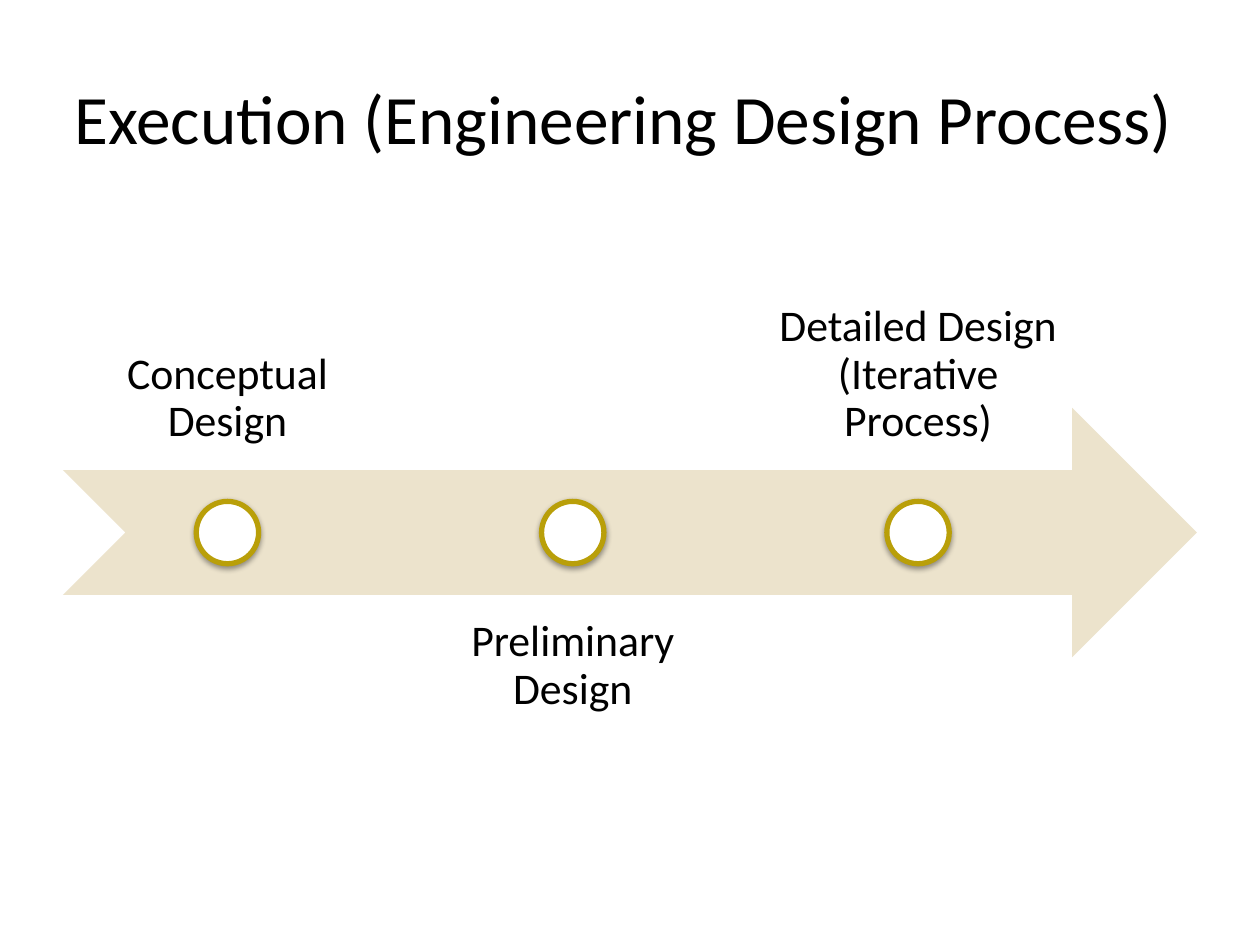
from lxml import etree
from pptx import Presentation
from pptx.dml.color import RGBColor
from pptx.enum import shapes, text
from pptx.oxml import ns
from pptx.util import Cm, Pt

COLORS = {"text": "000000", "arrow": "ECE3CC", "dot": "FFFFFF",
          "ring": "B99F09", "shadow": "000000"}
STAGES = ["Conceptual Design", "Preliminary Design",
          "Detailed Design (Iterative Process)"]


def rgb(name):
    """Return the named colour."""
    return RGBColor.from_string(COLORS[name])


def add_text(parent, box, content, size, anchor, margins):
    """Add a centred text box and return its paragraph."""
    tf = parent.add_textbox(*map(Cm, box)).text_frame
    frame = {"word_wrap": True, "vertical_anchor": anchor}
    frame.update({f"margin_{side}": Cm(m) for side, m in margins.items()})
    for name, value in frame.items():
        setattr(tf, name, value)
    p = tf.paragraphs[0]
    p.alignment = text.PP_ALIGN.CENTER
    r = p.add_run()
    r.text = content
    for name, value in {"name": "Calibri", "size": Pt(size)}.items():
        setattr(r.font, name, value)
    r.font.color.rgb = rgb("text")
    return p


def add_filled(parent, kind, box, fill):
    """Add a preset shape with a plain fill, no line and no shadow."""
    sp = parent.add_shape(kind, *map(Cm, box))
    sp.shadow.inherit = False
    sp.fill.solid()
    sp.fill.fore_color.rgb = rgb(fill)
    sp.line.fill.background()
    return sp


def add_dot(parent, box):
    """Add a ringed marker with a soft shadow below it."""
    sp = add_filled(parent, shapes.MSO_SHAPE.OVAL, box, "dot")
    sp.line.color.rgb = rgb("ring")
    sp.line.width = Pt(3)
    effects = sp._element.spPr.find(ns.qn("a:effectLst"))
    shadow = etree.SubElement(effects, ns.qn("a:outerShdw"), blurRad="40000",
                              dist="20000", dir="5400000", rotWithShape="0")
    color = etree.SubElement(shadow, ns.qn("a:srgbClr"), val=COLORS["shadow"])
    etree.SubElement(color, ns.qn("a:alpha"), val="38000")


def add_title(s, box):
    """Add the slide title."""
    margins = {"left": 0, "right": 0.25, "top": 0.13, "bottom": 0.13}
    add_text(s.shapes, box, "Execution (Engineering Design Process)", 39.6,
             text.MSO_ANCHOR.MIDDLE, margins)


def add_timeline(s, box):
    """Add the arrow with stages labelled above and below it in turn."""
    left, top, width, height = box
    group = s.shapes.add_group_shape().shapes
    band, label_w, dot = 0.4 * height, 0.29 * width, 0.1 * height
    add_filled(group, shapes.MSO_SHAPE.NOTCHED_RIGHT_ARROW,
               (left, top + 0.3 * height, width, band), "arrow")
    margins = dict.fromkeys(("left", "right", "top", "bottom"), 0.49)
    for i, stage in enumerate(STAGES):
        x = left + i * 1.05 * label_w
        below = i % 2
        anchor = text.MSO_ANCHOR.TOP if below else text.MSO_ANCHOR.BOTTOM
        p = add_text(group, (x, top + below * 0.6 * height, label_w, band),
                     stage, 25, anchor, margins)
        p.line_spacing = 0.9
        p.space_after = Pt(8.75)
        add_dot(group, (x + (label_w - dot) / 2, top + 0.45 * height, dot, dot))


def main():
    """Build and save the slide."""
    prs = Presentation()
    prs.slide_width, prs.slide_height = Cm(25.4), Cm(19.05)
    s = prs.slides.add_slide(prs.slide_layouts[6])
    add_title(s, (1.27, 0.76, 22.86, 3.18))
    add_timeline(s, (1.27, 4.45, 22.86, 12.57))
    prs.save("out.pptx")


if __name__ == "__main__":
    main()
